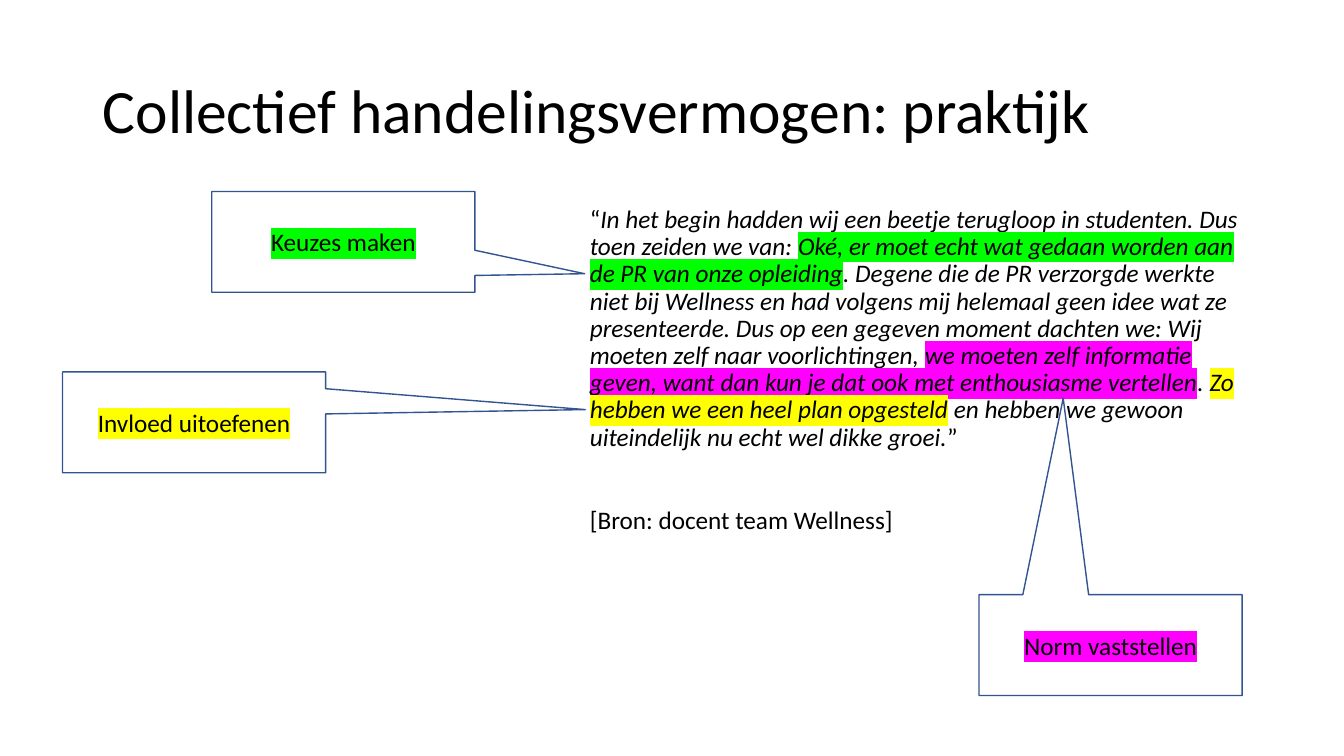
"""Build the slide on collective agency in practice."""
from lxml.etree import SubElement
from pptx import Presentation
from pptx.dml.color import RGBColor as Rgb
from pptx.enum.shapes import MSO_SHAPE as Shape
from pptx.enum.text import MSO_ANCHOR as Anchor, MSO_AUTO_SIZE as Auto, PP_ALIGN as Align
from pptx.oxml.ns import qn
from pptx.util import Inches, Pt

COLORS = {"ink": "000000", "paper": "FFFFFF", "edge": "325491",
          "choice": "00FF00", "norm": "FF00FF", "sway": "FFFF00"}

QUOTE = [
    ("“", False, None),
    ("In het begin hadden wij een beetje terugloop in studenten. "
     "Dus toen zeiden we van: ", True, None),
    ("Oké, er moet echt wat gedaan worden aan de PR van onze opleiding", True, "choice"),
    (". Degene die de PR verzorgde werkte niet bij Wellness en had volgens mij "
     "helemaal geen idee wat ze presenteerde. Dus op een gegeven moment dachten we: "
     "Wij moeten zelf naar voorlichtingen, ", True, None),
    ("we moeten zelf informatie geven, want dan kun je dat ook met "
     "enthousiasme vertellen", True, "norm"),
    (". ", True, None),
    ("Zo hebben we een heel plan opgesteld", True, "sway"),
    (" en hebben we gewoon uiteindelijk nu echt wel dikke groei.", True, None),
    ("”", False, None),
]
SOURCE = [("[Bron: docent team Wellness]", False, None)]

CALLOUTS = [
    ("Invloed uitoefenen", "sway", 0.62, 3.69, (1.487, -0.126)),
    ("Norm vaststellen", "norm", 9.71, 5.9, (-0.18, -2.449)),
    ("Keuzes maken", "choice", 2.1, 1.9, (0.917, 0.316)),
]


def color(name):
    """Return the named colour."""
    return Rgb.from_string(COLORS[name])


def add_run(para, text, size=18, slant=False, mark=None):
    """Add a run, with a highlight if a mark colour is named."""
    run = para.add_run()
    run.text = text
    font = run.font
    font.size = Pt(size)
    font.italic = slant
    font.color.rgb = color("ink")
    font.name = "Calibri"
    if mark:
        props = run._r.get_or_add_rPr()
        light = SubElement(props, qn("a:highlight"))
        SubElement(light, qn("a:srgbClr"), val=COLORS[mark])
        props.find(qn("a:latin")).addprevious(light)


def place(holder, left, top, width, height, anchor):
    """Move a placeholder and return its text frame."""
    holder.left, holder.top = Inches(left), Inches(top)
    holder.width, holder.height = Inches(width), Inches(height)
    frame = holder.text_frame
    frame.auto_size = Auto.NONE
    frame.vertical_anchor = anchor
    return frame


def add_title(slide, text):
    """Fill the title placeholder."""
    frame = place(slide.shapes.title, 0.92, 0.4, 11.5, 1.45, Anchor.MIDDLE)
    para = frame.paragraphs[0]
    para.alignment = Align.LEFT
    para.line_spacing = 0.9
    add_run(para, text, 44)


def set_para(para, runs, before):
    """Write a body paragraph without a bullet."""
    para.line_spacing = 0.9
    para.space_before = Pt(before)
    props = para._p.get_or_add_pPr()
    props.set("marL", "0")
    props.set("indent", "0")
    SubElement(props, qn("a:buNone"))
    for text, slant, mark in runs:
        add_run(para, text, slant=slant, mark=mark)


def add_quote(slide):
    """Fill the body placeholder with the quote and its source."""
    frame = place(slide.placeholders[1], 5.75, 2, 6.67, 4.76, Anchor.TOP)
    set_para(frame.paragraphs[0], QUOTE, 10)
    set_para(frame.add_paragraph(), SOURCE, 40)


def add_callout(slide, text, mark, left, top, tip):
    """Add a callout whose tip points at the marked words."""
    box = slide.shapes.add_shape(Shape.RECTANGULAR_CALLOUT, Inches(left), Inches(top),
                                 Inches(2.61), Inches(1))
    box.shadow.inherit = False
    box.adjustments[0], box.adjustments[1] = tip
    box.fill.solid()
    box.fill.fore_color.rgb = color("paper")
    box.line.color.rgb = color("edge")
    box.line.width = Pt(1)
    box.text_frame.vertical_anchor = Anchor.MIDDLE
    para = box.text_frame.paragraphs[0]
    para.alignment = Align.CENTER
    add_run(para, text, mark=mark)


def main():
    """Build and save the slide."""
    deck = Presentation()
    deck.slide_width, deck.slide_height = Inches(13.33), Inches(7.5)
    slide = deck.slides.add_slide(deck.slide_layouts[1])
    add_title(slide, "Collectief handelingsvermogen: praktijk")
    add_quote(slide)
    for callout in CALLOUTS:
        add_callout(slide, *callout)
    deck.save("out.pptx")


if __name__ == "__main__":
    main()
